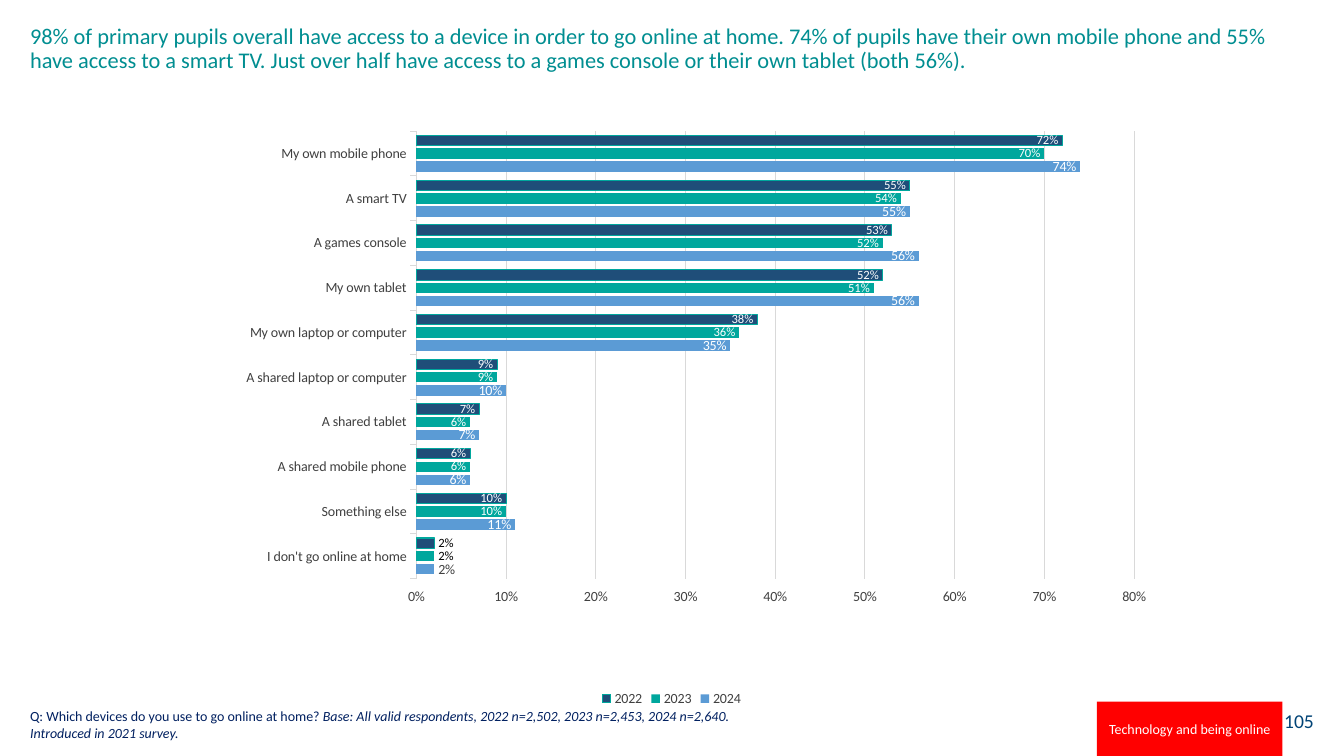
from lxml.etree import SubElement
from pptx import Presentation
from pptx.chart.data import CategoryChartData
from pptx.dml.color import RGBColor
from pptx.enum.chart import XL_CHART_TYPE, XL_LABEL_POSITION, XL_LEGEND_POSITION, XL_TICK_MARK
from pptx.enum.shapes import MSO_SHAPE
from pptx.enum.text import MSO_ANCHOR, PP_ALIGN
from pptx.oxml.ns import qn
from pptx.util import Inches, Pt

FONT = "Calibri"
TITLE = (
    "98% of primary pupils overall have access to a device in order to go online at home. "
    "74% of pupils have their own mobile phone and 55% have access to a smart TV. "
    "Just over half have access to a games console or their own tablet (both 56%)."
)
# Runs are (text, italic)
NOTE = [
    [("Q: Which devices do you use to go online at home? ", False),
     ("Base: All valid respondents, 2022 n=2,502, 2023 n=2,453, 2024 n=2,640.", True)],
    [("Introduced in 2021 survey.", True)],
]
YEARS = ("2024", "2023", "2022")
# Devices from the bottom of the chart upwards, in percent by year
DEVICES = [
    ("I don't go online at home", 2, 2, 2),
    ("Something else", 11, 10, 10),
    ("A shared mobile phone", 6, 6, 6),
    ("A shared tablet", 7, 6, 7),
    ("A shared laptop or computer", 10, 9, 9),
    ("My own laptop or computer", 35, 36, 38),
    ("My own tablet", 56, 51, 52),
    ("A games console", 56, 52, 53),
    ("A smart TV", 55, 54, 55),
    ("My own mobile phone", 74, 70, 72),
]
# Fill, outline, label size, colour of the label outside the bar
STYLES = [
    ("5B9BD5", None, 10, "404040"),
    ("00A79D", None, 9, "000000"),
    ("1F4E79", "00A79D", 9, "000000"),
]
PLOT = {"x": 0.248, "y": 0.034, "w": 0.709, "h": 0.746}


def paint(form, color):
    """Set a solid colour on a fill."""
    form.solid()
    form.fore_color.rgb = RGBColor.from_string(color)


def style(font, size, color):
    font.name = FONT
    font.size = Pt(size)
    font.color.rgb = RGBColor.from_string(color)


def stroke(line, color):
    paint(line.fill, color)
    line.width = Pt(0.75)


def write(shape, paras, size, color, align=PP_ALIGN.LEFT, anchor=MSO_ANCHOR.TOP, space=1.0):
    frame = shape.text_frame
    frame.word_wrap = True
    frame.vertical_anchor = anchor
    for i, runs in enumerate(paras):
        para = frame.add_paragraph() if i else frame.paragraphs[0]
        para.alignment = align
        para.line_spacing = space
        for text, italic in runs:
            run = para.add_run()
            run.text = text
            run.font.italic = italic
            style(run.font, size, color)


def add_block(slide, box, fill, text, size, color, align):
    """Add a filled rectangle with one line of text."""
    block = slide.shapes.add_shape(MSO_SHAPE.RECTANGLE, *map(Inches, box))
    block.shadow.inherit = False
    paint(block.fill, fill)
    block.line.fill.background()
    write(block, [[(text, False)]], size, color, align, MSO_ANCHOR.MIDDLE)


def add_note(slide, box, *args, **kwargs):
    write(slide.shapes.add_textbox(*map(Inches, box)), *args, **kwargs)


def place_plot(chart):
    """Fix the inner plot area as fractions of the chart."""
    area = chart._chartSpace.chart.plotArea
    layout = area.find(qn("c:layout"))
    if layout is None:
        layout = SubElement(area, qn("c:layout"))
        area.insert(0, layout)
    manual = SubElement(layout, qn("c:manualLayout"))
    parts = [("layoutTarget", "inner"), ("xMode", "edge"), ("yMode", "edge")]
    for tag, val in parts + list(PLOT.items()):
        SubElement(manual, qn("c:" + tag)).set("val", str(val))


def style_bars(series, fill, edge, size, outer):
    paint(series.format.fill, fill)
    series.invert_if_negative = False
    if edge:
        stroke(series.format.line, edge)
    labels = series.data_labels
    labels.show_value = True
    labels.number_format = "0%"
    labels.number_format_is_linked = False
    labels.position = XL_LABEL_POSITION.INSIDE_END
    style(labels.font, size, "FFFFFF")
    label = series.points[0].data_label
    style(label.font, size, outer)
    label.position = XL_LABEL_POSITION.OUTSIDE_END


def add_bars(slide, box):
    names, *cols = zip(*DEVICES)
    data = CategoryChartData(number_format="0%")
    data.categories = names
    for year, col in zip(YEARS, cols):
        data.add_series(year, [val / 100 for val in col])
    kind = XL_CHART_TYPE.BAR_CLUSTERED
    chart = slide.shapes.add_chart(kind, *map(Inches, box), data).chart
    style(chart.font, 10, "000000")
    chart.has_title = False
    chart.has_legend = True
    chart.legend.position = XL_LEGEND_POSITION.BOTTOM
    chart.legend.include_in_layout = False
    style(chart.legend.font, 10, "404040")
    place_plot(chart)

    plot = chart.plots[0]
    plot.vary_by_categories = False
    plot.gap_width = 80
    plot.overlap = -25
    for series, look in zip(plot.series, STYLES):
        style_bars(series, *look)

    for axis in (chart.category_axis, chart.value_axis):
        axis.major_tick_mark = XL_TICK_MARK.OUTSIDE
        axis.minor_tick_mark = XL_TICK_MARK.NONE
        style(axis.tick_labels.font, 10, "404040")
    stroke(chart.category_axis.format.line, "D9D9D9")
    scale = chart.value_axis
    scale.minimum_scale, scale.maximum_scale, scale.major_unit = 0, 0.8, 0.1
    scale.tick_labels.number_format = "0%"
    scale.tick_labels.number_format_is_linked = False
    scale.format.line.fill.background()
    stroke(scale.major_gridlines.format.line, "D9D9D9")


def main():
    deck = Presentation()
    deck.slide_width, deck.slide_height = Inches(13.33), Inches(7.5)
    slide = deck.slides.add_slide(deck.slide_layouts[6])
    add_block(slide, (12.54, 6.95, 0.59, 0.4), "FFFFFF", "105", 14, "004376", PP_ALIGN.RIGHT)
    add_note(slide, (0.2, 0.2, 12.73, 0.98), [[(TITLE, False)]], 16, "008E91", space=0.9)
    add_bars(slide, (1.64, 1.1, 10.04, 5.95))
    add_note(slide, (0.2, 6.96, 11.19, 0.44), NOTE, 10, "002060", anchor=MSO_ANCHOR.BOTTOM)
    add_block(slide, (10.88, 6.96, 1.84, 0.54), "FF0000", "Technology and being online",
              10, "FFFFFF", PP_ALIGN.CENTER)
    deck.save("out.pptx")


if __name__ == "__main__":
    main()
